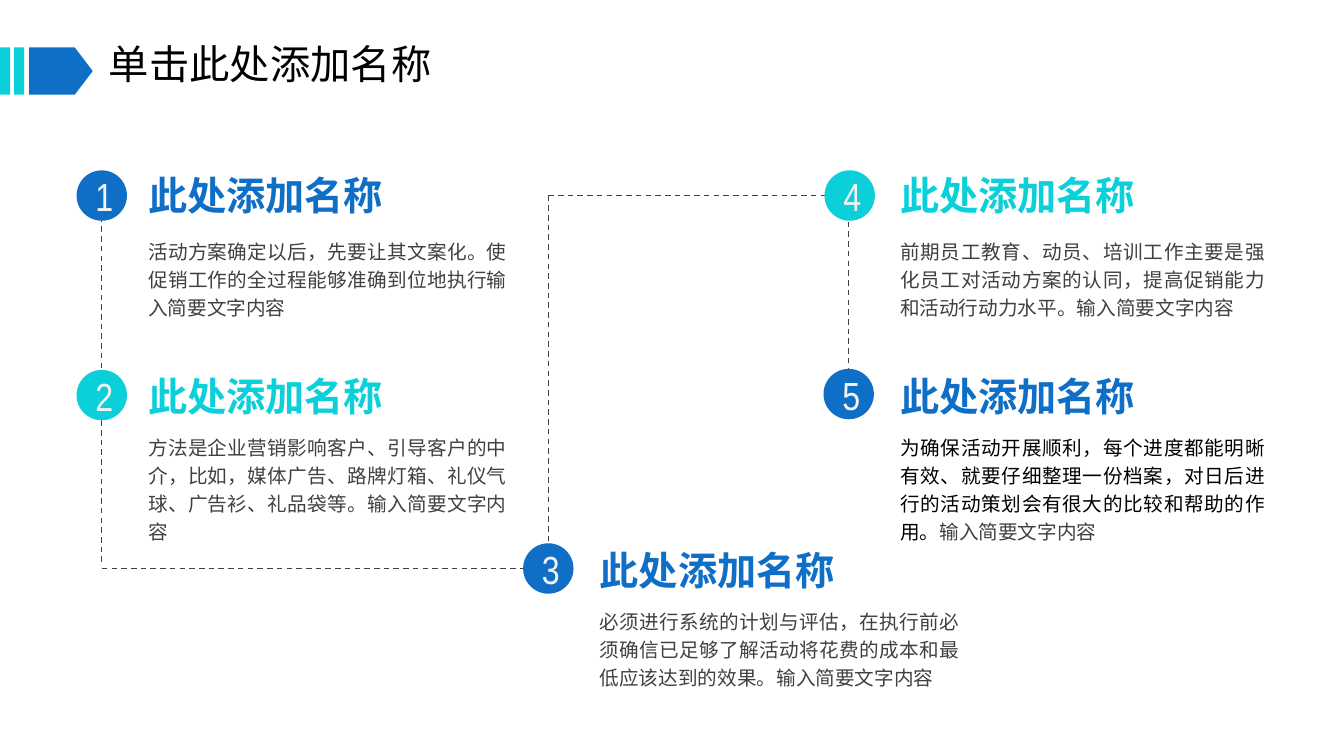
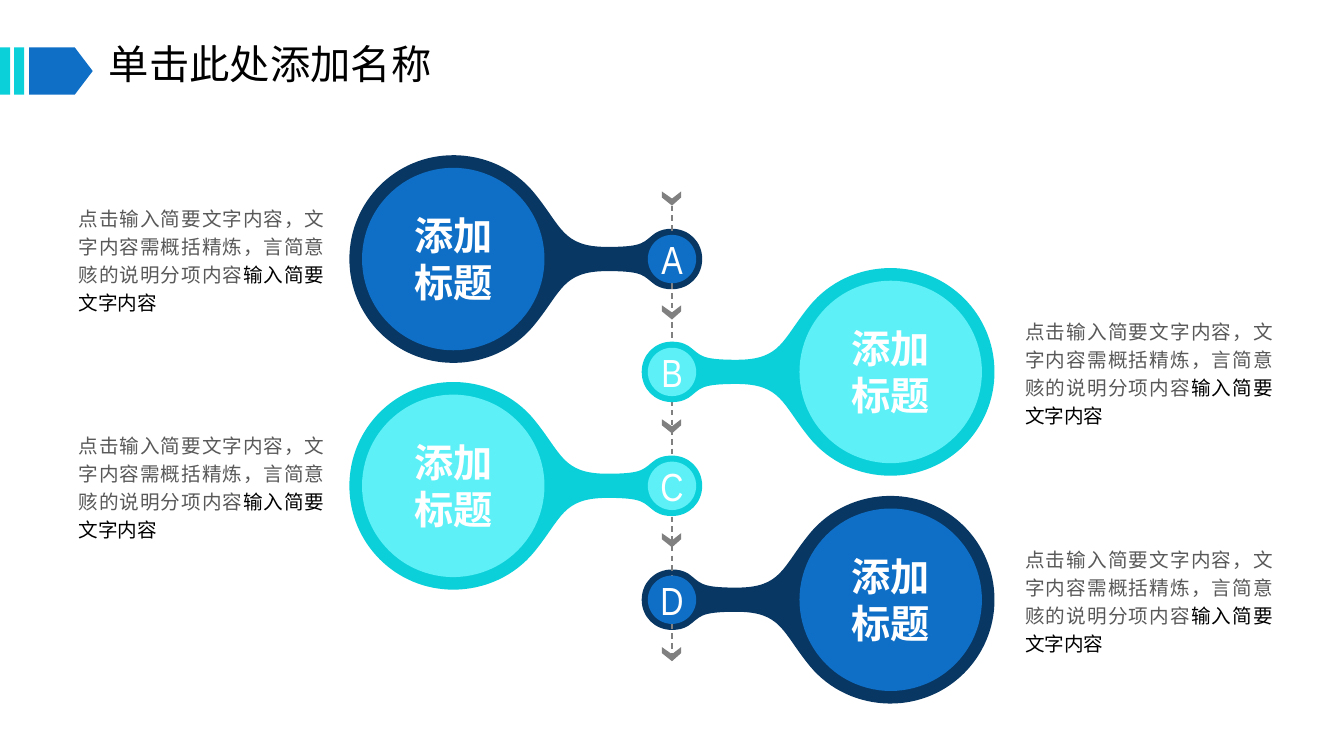
from lxml import etree
from pptx import Presentation
from pptx.dml.color import RGBColor
from pptx.enum.dml import MSO_LINE
from pptx.enum.shapes import MSO_CONNECTOR, MSO_SHAPE
from pptx.enum.text import MSO_ANCHOR, MSO_AUTO_SIZE, PP_ALIGN
from pptx.oxml.ns import qn
from pptx.util import Inches, Pt

STRAIGHT = MSO_CONNECTOR.STRAIGHT
DASH = MSO_LINE.DASH
RECTANGLE, PENTAGON, ELLIPSE = MSO_SHAPE.RECTANGLE, MSO_SHAPE.PENTAGON, MSO_SHAPE.OVAL
TOP, MIDDLE = MSO_ANCHOR.TOP, MSO_ANCHOR.MIDDLE
LEFT, CENTER, JUSTIFY = PP_ALIGN.LEFT, PP_ALIGN.CENTER, PP_ALIGN.JUSTIFY
FIXED, GROW = MSO_AUTO_SIZE.NONE, MSO_AUTO_SIZE.SHAPE_TO_FIT_TEXT

BLUE, NAVY, AQUA, PALE_AQUA = "0F6FC6", "083763", "0BD0D9", "5EF0F7"
BLACK, DARK_GRAY, TEXT_GRAY, GRAY = "000000", "404040", "595959", "808080"
WHITE, OFF_WHITE = "FFFFFF", "F2F2F2"
TEXT_FONT, LABEL_FONT = "Noto Sans CJK SC", "Arial Narrow"
SLIDE_WIDTH, SLIDE_HEIGHT = 40 / 3, 7.5

TITLE = "单击此处添加名称"
STEP_HEADING = "此处添加名称"
DROP_HEADING = "添加标题"
MORE_TEXT = "输入简要文字内容"
DROP_TEXT = "点击输入简要文字内容，文字内容需概括精炼，言简意赅的说明分项内容"

# Circle left and top, colour, heading box, body box, body runs
STEPS = [
    (0.76, 1.69, BLUE, (1.47, 1.7, 2.93, 0.47), (1.47, 2.34, 3.56, 0.84),
     [("活动方案确定以后，先要让其文案化。使促销工作的全过程能够准确到位地执行"
       + MORE_TEXT, DARK_GRAY)]),
    (0.76, 3.67, AQUA, (1.47, 3.69, 3.28, 0.47), (1.47, 4.28, 3.56, 1.12),
     [("方法是企业营销影响客户、引导客户的中介，比如，媒体广告、路牌灯箱、"
       "礼仪气球、广告衫、礼品袋等。" + MORE_TEXT, DARK_GRAY)]),
    (5.19, 5.39, BLUE, (5.95, 5.42, 2.38, 0.47), (5.95, 6.01, 3.57, 0.84),
     [("必须进行系统的计划与评估，在执行前必须确信已足够了解活动将花费的成本"
       "和最低应该达到的效果。" + MORE_TEXT, DARK_GRAY)]),
    (8.18, 1.69, AQUA, (8.93, 1.7, 3.11, 0.47), (8.93, 2.34, 3.62, 0.84),
     [("前期员工教育、动员、培训工作主要是强化员工对活动方案的认同，"
       "提高促销能力和活动行动力水平。" + MORE_TEXT, DARK_GRAY)]),
    (8.17, 3.66, BLUE, (8.93, 3.69, 3.24, 0.47), (8.93, 4.28, 3.62, 1.12),
     [("为确保活动开展顺利，每个进度都能明晰有效、就要仔细整理一份档案，"
       "对日后进行的活动策划会有很大的比较和帮助的作用。", BLACK),
      (MORE_TEXT, DARK_GRAY)]),
]
STEP_SIZE = 0.5
STEP_ROUTE = [
    (1.01, 2.15, 1.01, 3.67),
    (1.01, 4.17, 1.01, 5.6),
    (1.01, 5.64, 5.19, 5.64),
    (5.44, 1.94, 5.44, 5.39),
    (5.44, 1.94, 8.18, 1.94),
    (8.42, 2.2, 8.42, 3.66),
]

# Letter, centre height, side of the spine, text left and width, rim and face colour
DROPS = [
    ("A", 2.57, -1, 0.78, 2.44, NAVY, BLUE),
    ("B", 3.69, 1, 10.17, 2.46, AQUA, PALE_AQUA),
    ("C", 4.82, -1, 0.78, 2.44, AQUA, PALE_AQUA),
    ("D", 5.95, 1, 10.17, 2.46, NAVY, BLUE),
]
SPINE_X, CHEVRON_TOP, CHEVRON_PITCH = SLIDE_WIDTH / 2, 1.9, 1.13
FACE_OFFSET, FACE_SIZE, LETTER_SIZE = 2.17, 1.81, 0.48
# Bézier points of a drop's upper edge, far tip to near tip, around its letter
UPPER_EDGE = [
    (3.2, 0),
    (3.2, -0.57), (2.74, -1.03), (2.17, -1.03),
    (1.85, -1.03), (1.56, -0.89), (1.37, -0.66),
    (1.09, -0.32), (1.09, -0.12), (0.64, -0.12),
    (0.26, -0.12), (0.29, -0.17), (0.16, -0.26),
    (0.11, -0.29), (0.06, -0.3), (0, -0.3),
    (-0.17, -0.3), (-0.3, -0.17), (-0.3, 0),
]
DROP_EDGE = UPPER_EDGE + [(x, -y) for x, y in UPPER_EDGE[-2::-1]]
CHEVRON = [(0, 0.07), (-0.1, 0), (-0.1, 0.06), (0, 0.14), (0.09, 0.06), (0.09, 0)]


def rgb(color):
    return RGBColor.from_string(color)


def box(left, top, width, height):
    return [Inches(length) for length in (left, top, width, height)]


def paint(shape, color):
    shape.shadow.inherit = False
    shape.fill.solid()
    shape.fill.fore_color.rgb = rgb(color)
    shape.line.fill.background()


def add_filled(parent, kind, area, color):
    shape = parent.shapes.add_shape(kind, *box(*area))
    paint(shape, color)
    return shape


def add_outline(parent, points, color):
    points = [(Inches(x), Inches(y)) for x, y in points]
    builder = parent.shapes.build_freeform(*points[0], scale=1.0)
    builder.add_line_segments(points[1:], close=True)
    shape = builder.convert_to_shape()
    paint(shape, color)
    return shape


def bend(shape):
    """Turn each three straight segments of the outline into one Bézier curve."""
    segments = list(shape._element.iter(qn("a:lnTo")))
    for first, second, third in zip(segments[::3], segments[1::3], segments[2::3]):
        first.tag = qn("a:cubicBezTo")
        for segment in (second, third):
            first.append(segment[0])
            segment.getparent().remove(segment)


def add_dashed_line(parent, ends, color):
    line = parent.shapes.add_connector(STRAIGHT, *box(*ends))
    line.line.color.rgb = rgb(color)
    line.line.width = Pt(1)
    line.line.dash_style = DASH
    etree.SubElement(line._element.spPr, qn("a:effectLst"))


def write(shape, runs, size, name=TEXT_FONT, bold=False, alignment=LEFT,
          anchor=TOP, spacing=None, wrap=True, fit=FIXED):
    """Fill the shape with one paragraph made of (text, colour) runs."""
    frame = shape.text_frame
    frame.word_wrap = wrap
    frame.auto_size = fit
    frame.vertical_anchor = anchor
    frame.margin_left = frame.margin_right = 0
    frame.margin_top = frame.margin_bottom = 0
    paragraph = frame.paragraphs[0]
    paragraph.alignment = alignment
    if spacing:
        paragraph.line_spacing = spacing
    font = paragraph.font
    font.size, font.bold, font.name = Pt(size), bold, name
    etree.SubElement(font._element, qn("a:ea"), typeface=name)
    for text, color in runs:
        run = paragraph.add_run()
        run.text = text
        run.font.color.rgb = rgb(color)


def add_text(parent, area, runs, size, **style):
    write(parent.shapes.add_textbox(*box(*area)), runs, size, fit=GROW, **style)


def add_body(slide, area, runs):
    add_text(slide, area, runs, 14, alignment=JUSTIFY, spacing=Pt(20))


def add_titled_slide(presentation):
    slide = presentation.slides.add_slide(presentation.slide_layouts[5])
    title = slide.shapes.title
    title.left, title.top, title.width, title.height = box(1.08, 0.44, 5.51, 0.55)
    write(title, [(TITLE, BLACK)], 28.8, spacing=0.9)
    top, height = 0.47, 0.47
    arrow = add_filled(slide, PENTAGON, (0.29, top, 0.63, height), BLUE)
    arrow.adjustments[0] = 0.38
    for left in (0.14, 0):
        add_filled(slide, RECTANGLE, (left, top, 0.1, height), AQUA)
    return slide


def add_badge(slide, number, left, top, color):
    badge = slide.shapes.add_group_shape()
    add_filled(badge, ELLIPSE, (left, top, STEP_SIZE, STEP_SIZE), color)
    add_text(badge, (left + 0.17, top + 0.02, 0.21, 0.47),
             [(str(number), OFF_WHITE)], 28, name=LABEL_FONT,
             alignment=CENTER, wrap=False)


def build_steps_slide(presentation):
    slide = add_titled_slide(presentation)
    for ends in STEP_ROUTE:
        add_dashed_line(slide, ends, DARK_GRAY)
    for _, _, color, heading_area, body_area, runs in STEPS:
        add_body(slide, body_area, runs)
        add_text(slide, heading_area, [(STEP_HEADING, color)], 28, bold=True)
    for number, (left, top, color, *_) in enumerate(STEPS, 1):
        add_badge(slide, number, left, top, color)


def add_rim(slide, center_y, side, color):
    points = [(SPINE_X + side * x, center_y + y) for x, y in DROP_EDGE]
    bend(add_outline(slide, points, color))


def add_spine(slide):
    spine = slide.shapes.add_group_shape()
    add_dashed_line(spine, (SPINE_X, 2.04, SPINE_X, 6.5), GRAY)
    for index in range(len(DROPS) + 1):
        top = CHEVRON_TOP + index * CHEVRON_PITCH
        add_outline(spine, [(SPINE_X + x, top + y) for x, y in CHEVRON], GRAY)


def add_disc(slide, center_x, center_y, size, color):
    area = (center_x - size / 2, center_y - size / 2, size, size)
    return add_filled(slide, ELLIPSE, area, color)


def build_drops_slide(presentation):
    slide = add_titled_slide(presentation)
    for _, center_y, _, text_left, text_width, _, _ in DROPS:
        add_body(slide, (text_left, center_y - 0.56, text_width, 1.12),
                 [(DROP_TEXT, TEXT_GRAY), (MORE_TEXT, BLACK)])
    # The spine crosses the navy rims and passes behind the aqua ones
    for rim_color in (NAVY, AQUA):
        for _, center_y, side, _, _, rim, _ in DROPS:
            if rim == rim_color:
                add_rim(slide, center_y, side, rim)
        if rim_color == NAVY:
            add_spine(slide)
    for letter, center_y, side, _, _, _, face in DROPS:
        face_x = SPINE_X + side * FACE_OFFSET
        add_disc(slide, face_x, center_y, FACE_SIZE, face)
        disc = add_disc(slide, SPINE_X, center_y, LETTER_SIZE, face)
        write(disc, [(letter, WHITE)], 28, name=LABEL_FONT,
              alignment=CENTER, anchor=MIDDLE)
        add_text(slide, (face_x - 0.51, center_y - 0.47, 1.02, 0.94),
                 [(DROP_HEADING, WHITE)], 28, bold=True, alignment=CENTER)


def main():
    presentation = Presentation()
    presentation.slide_width = Inches(SLIDE_WIDTH)
    presentation.slide_height = Inches(SLIDE_HEIGHT)
    build_steps_slide(presentation)
    build_drops_slide(presentation)
    presentation.save("out.pptx")


if __name__ == "__main__":
    main()
